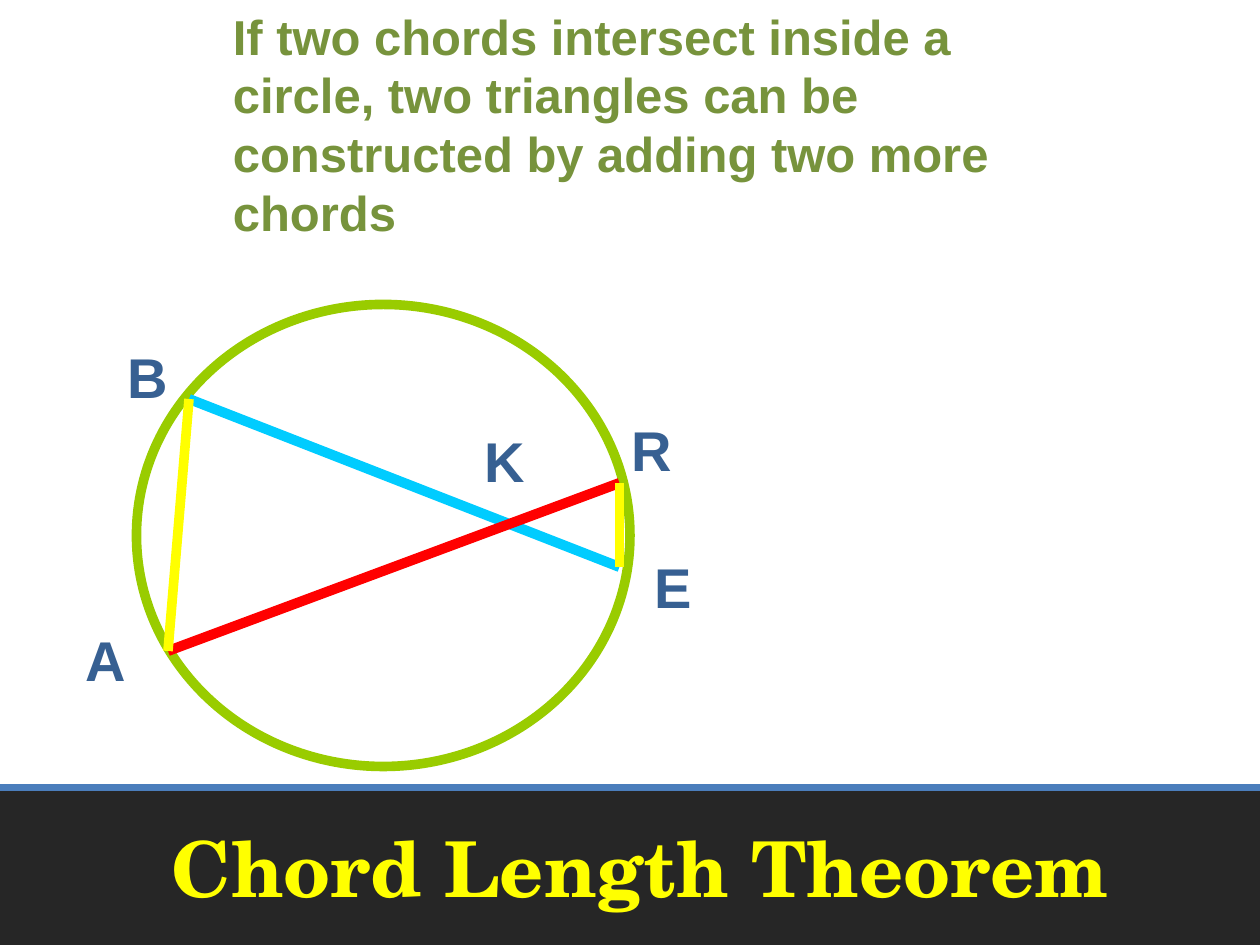
from dataclasses import dataclass

from lxml.etree import SubElement
from pptx import Presentation
from pptx.dml.color import RGBColor
from pptx.enum.shapes import MSO_CONNECTOR, MSO_SHAPE
from pptx.enum.text import MSO_ANCHOR, MSO_AUTO_SIZE, PP_ALIGN
from pptx.oxml.ns import qn
from pptx.util import Inches, Pt


@dataclass(frozen=True)
class Theme:
    band: str = "262626"
    rule: str = "4B7EBC"
    title: str = "FFFF00"
    ring: str = "99CC00"
    blue: str = "00CCFF"
    red: str = "FF0000"
    side: str = "FFFF00"
    label: str = "376092"
    note: str = "77933C"
    serif: str = "TeX Gyre Schola"
    sans: str = "Arial"
    title_size: int = 44
    label_size: int = 32
    note_size: int = 28


@dataclass(frozen=True)
class Spot:
    col: float
    row: float


@dataclass(frozen=True)
class Chord:
    start: Spot
    end: Spot
    color: str
    width: float


@dataclass(frozen=True)
class Label:
    name: str
    col: float
    row: float


THEME = Theme()
CELL = Inches(1) / 12  # grid of 120 columns by 90 rows
COLS, ROWS, BASE = 120, 90, 75


def grid(*cells: float) -> list[int]:
    return [round(cell * CELL) for cell in cells]


def add_line(slide, chord: Chord) -> None:
    start, end = chord.start, chord.end
    line = slide.shapes.add_connector(
        MSO_CONNECTOR.STRAIGHT, *grid(start.col, start.row, end.col, end.row))
    line.line.color.rgb = RGBColor.from_string(chord.color)
    line.line.width = Pt(chord.width)
    SubElement(line._element.spPr, qn("a:effectLst"))


def add_form(slide, kind: MSO_SHAPE, box: tuple, fill: str = "",
             edge: str = "", width: float = 0) -> None:
    form = slide.shapes.add_shape(kind, *grid(*box))
    form.shadow.inherit = False
    if fill:
        form.fill.solid()
        form.fill.fore_color.rgb = RGBColor.from_string(fill)
    else:
        form.fill.background()
    if edge:
        form.line.color.rgb = RGBColor.from_string(edge)
        form.line.width = Pt(width)
    else:
        form.line.fill.background()


def add_text(slide, text: str, box: tuple, *, size: int, color: str,
             font: str = THEME.sans, align=PP_ALIGN.LEFT,
             anchor=MSO_ANCHOR.TOP, wrap: bool = True,
             fit=MSO_AUTO_SIZE.SHAPE_TO_FIT_TEXT) -> None:
    frame = slide.shapes.add_textbox(*grid(*box)).text_frame
    frame.word_wrap = wrap
    frame.auto_size = fit
    frame.vertical_anchor = anchor
    par = frame.paragraphs[0]
    par.alignment = align
    run = par.add_run()
    run.text = text
    run.font.name = font
    run.font.size = Pt(size)
    run.font.bold = True
    run.font.color.rgb = RGBColor.from_string(color)


def main() -> None:
    deck = Presentation()
    deck.slide_width, deck.slide_height = grid(COLS, ROWS)
    slide = deck.slides.add_slide(deck.slide_layouts[6])

    # Title band
    add_form(slide, MSO_SHAPE.RECTANGLE, (0, BASE, COLS, ROWS - BASE),
             fill=THEME.band)
    add_line(slide, Chord(Spot(0, BASE), Spot(COLS, BASE), THEME.rule, 4))
    add_text(slide, "Chord Length Theorem", (7, BASE, 108, ROWS - BASE),
             size=THEME.title_size, color=THEME.title, font=THEME.serif,
             align=PP_ALIGN.CENTER, anchor=MSO_ANCHOR.MIDDLE,
             fit=MSO_AUTO_SIZE.NONE)

    # Circle, crossing chords, then the two added chords
    add_form(slide, MSO_SHAPE.OVAL, (13, 29, 47, 44),
             edge=THEME.ring, width=5.5)
    a, b, e, r = Spot(16, 62), Spot(18, 38), Spot(59, 54), Spot(59, 46)
    for chord in (Chord(b, e, THEME.blue, 5.75),
                  Chord(a, r, THEME.red, 5.75),
                  Chord(b, a, THEME.side, 5.5),
                  Chord(r, e, THEME.side, 5.5)):
        add_line(slide, chord)

    # Point names
    for label in (Label("B", 11, 32), Label("R", 59, 39),
                  Label("E", 61.2, 52), Label("A", 7, 59),
                  Label("K", 45, 40)):
        add_text(slide, label.name, (label.col, label.row, 6.2, 7.6),
                 size=THEME.label_size, color=THEME.label, wrap=False)

    # Statement
    add_text(slide, "If two chords intersect inside a circle, two triangles "
             "can be constructed by adding two more chords",
             (21, 0, 81.2, 23.6), size=THEME.note_size, color=THEME.note)

    deck.save("out.pptx")


if __name__ == "__main__":
    main()
